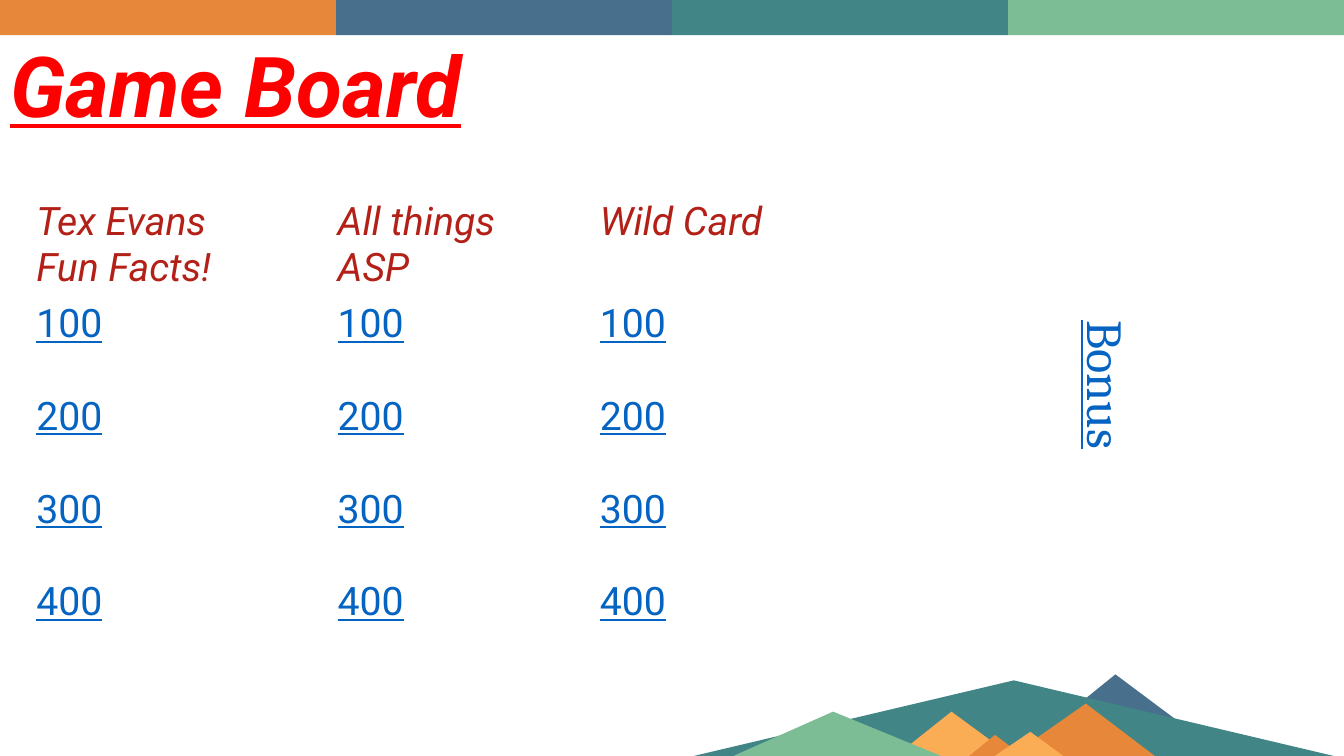
from dataclasses import dataclass

from pptx import Presentation
from pptx.dml.color import RGBColor
from pptx.enum.shapes import MSO_SHAPE
from pptx.enum.text import MSO_ANCHOR, MSO_AUTO_SIZE, PP_ALIGN
from pptx.util import Inches, Pt


@dataclass(frozen=True)
class Theme:
    orange: str = "E6873A"
    blue: str = "486F8B"
    teal: str = "418586"
    green: str = "7DBD96"
    amber: str = "FAAD54"
    title: str = "FF0000"
    category: str = "B32017"
    link: str = "0563C1"
    sans: str = "Roboto"
    serif: str = "Cambria"
    title_size: int = 60
    bonus_size: int = 36
    board_size: int = 28


THEME = Theme()
SLIDE_WIDTH, SLIDE_HEIGHT = 13.33, 7.5
CATEGORIES = [["Tex Evans", "Fun Facts!"], ["All things", "ASP"], ["Wild Card"]]
POINTS = ["100", "200", "300", "400"]
COLUMN_WIDTHS = [0.26, 2.99, 2.6, 2.31]
ROW_HEIGHT = 0.92

# Peaks from back to front: left, top, width, height, apex position, colour
PEAKS = [
    (3.21, 0, 2.11, 0.82, 0.48, THEME.blue),
    (0, 0.06, 6.43, 0.76, 0.5, THEME.teal),
    (3.16, 0.29, 1.48, 0.54, 0.52, THEME.orange),
    (2.03, 0.37, 1.18, 0.45, 0.48, THEME.amber),
    (2.76, 0.6, 0.56, 0.22, 0.48, THEME.orange),
    (0.41, 0.37, 2.11, 0.45, 0.48, THEME.green),
    (3.01, 0.57, 0.71, 0.25, 0.52, THEME.amber),
]


def style(paragraph, font_name, size, color, bold=False, italic=False, underline=False):
    font = paragraph.font
    font.name, font.size = font_name, Pt(size)
    font.color.rgb = RGBColor.from_string(color)
    font.bold, font.italic, font.underline = bold, italic, underline


def add_filled(page, kind, left, top, width, height, color):
    shape = page.shapes.add_shape(kind, Inches(left), Inches(top), Inches(width), Inches(height))
    shape.shadow.inherit = False
    shape.fill.solid()
    shape.fill.fore_color.rgb = RGBColor.from_string(color)
    shape.line.fill.background()
    return shape


def add_top_band(page, left, top, width, height):
    colors = [THEME.orange, THEME.blue, THEME.teal, THEME.green]
    step = width / len(colors)
    for index, color in enumerate(colors):
        add_filled(page, MSO_SHAPE.RECTANGLE, left + index * step, top, step, height, color)


def add_mountains(page, left, top):
    for x, y, width, height, apex, color in PEAKS:
        peak = add_filled(page, MSO_SHAPE.ISOSCELES_TRIANGLE, left + x, top + y, width, height, color)
        peak.adjustments[0] = apex


def add_title(page, left, top, width, height):
    title = page.shapes.title
    title.left, title.top = Inches(left), Inches(top)
    title.width, title.height = Inches(width), Inches(height)
    frame = title.text_frame
    frame.text = "Game Board"
    frame.vertical_anchor = MSO_ANCHOR.MIDDLE
    para = frame.paragraphs[0]
    para.alignment = PP_ALIGN.LEFT
    para.line_spacing = 0.9
    style(para, THEME.sans, THEME.title_size, THEME.title, bold=True, italic=True, underline=True)


def add_board(page, left, top):
    rows = [CATEGORIES] + [[[points]] * len(CATEGORIES) for points in POINTS]
    table = page.shapes.add_table(
        len(rows), len(COLUMN_WIDTHS), Inches(left), Inches(top),
        Inches(sum(COLUMN_WIDTHS)), Inches(ROW_HEIGHT * len(rows))).table
    table.first_row = table.horz_banding = False
    for column, width in zip(table.columns, COLUMN_WIDTHS):
        column.width = Inches(width)
    for cell in table.iter_cells():
        cell.fill.background()

    # The first column is an empty margin
    for row_index, row in enumerate(rows):
        heading = row_index == 0
        color = THEME.category if heading else THEME.link
        for column_index, lines in enumerate(row, start=1):
            frame = table.cell(row_index, column_index).text_frame
            frame.text = "\n".join(lines)
            for para in frame.paragraphs:
                style(para, THEME.sans, THEME.board_size, color, italic=heading, underline=not heading)


def add_bonus(page, left, top, width, height):
    box = page.shapes.add_textbox(Inches(left), Inches(top), Inches(width), Inches(height))
    box.rotation = 90
    frame = box.text_frame
    frame.word_wrap = True
    frame.auto_size = MSO_AUTO_SIZE.SHAPE_TO_FIT_TEXT
    frame.text = "Bonus"
    para = frame.paragraphs[0]
    para.alignment = PP_ALIGN.CENTER
    style(para, THEME.serif, THEME.bonus_size, THEME.link, underline=True)


def main():
    deck = Presentation()
    deck.slide_width, deck.slide_height = Inches(SLIDE_WIDTH), Inches(SLIDE_HEIGHT)
    page = deck.slides.add_slide(deck.slide_layouts[5])

    # Decoration
    add_top_band(page, 0, 0, SLIDE_WIDTH, 0.35)
    add_mountains(page, 6.84, 6.69)

    # Game content
    add_title(page, 0, 0.1, 11.88, 1.59)
    add_board(page, 0, 1.93)
    add_bonus(page, 9.04, 3.46, 3.87, 0.71)
    deck.save("out.pptx")


if __name__ == "__main__":
    main()
